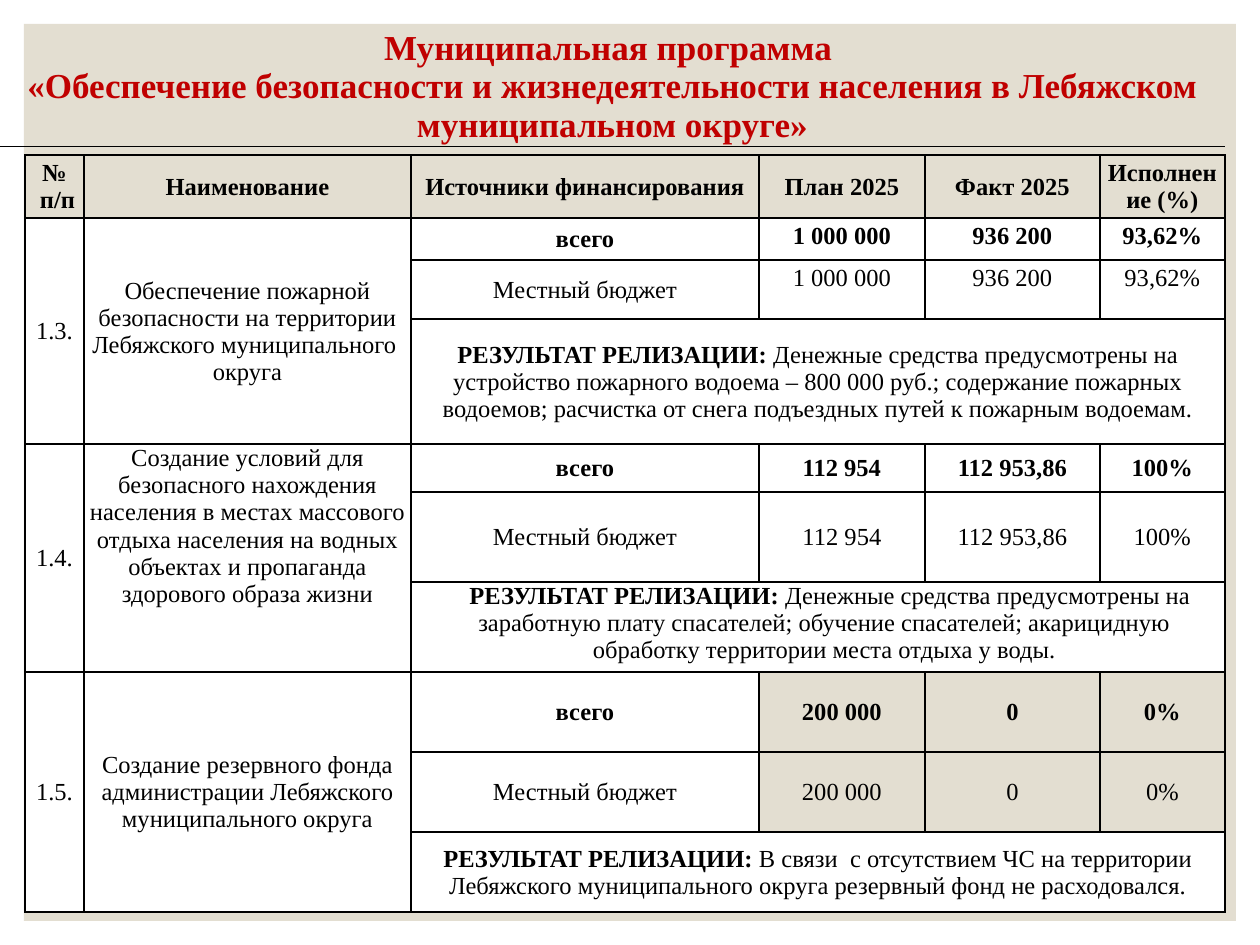
from lxml.etree import SubElement
from pptx import Presentation
from pptx.dml.color import RGBColor
from pptx.enum.shapes import MSO_SHAPE
from pptx.enum.text import MSO_ANCHOR, PP_ALIGN
from pptx.oxml.ns import qn
from pptx.util import Emu, Pt

BEIGE = RGBColor(0xE3, 0xDE, 0xD1)
WHITE = RGBColor(0xFF, 0xFF, 0xFF)
BLACK = RGBColor(0x00, 0x00, 0x00)
RED = RGBColor(0xC0, 0x00, 0x00)

COLUMN_WIDTHS = [59, 327, 348, 166, 175, 125]
ROW_HEIGHTS = [63, 42, 59, 125, 48, 90, 90, 80, 80, 80]
HEADERS = ["№\n п/п", "Наименование", "Источники финансирования",
           "План 2025", "Факт 2025", "Исполнение (%)"]
RESULT = "РЕЗУЛЬТАТ РЕЛИЗАЦИИ:"
TOP, MIDDLE = MSO_ANCHOR.TOP, MSO_ANCHOR.MIDDLE

MEASURES = [
    dict(
        number="1.3.",
        name="Обеспечение пожарной безопасности на территории "
             "Лебяжского муниципального \nокруга",
        values=["1 000 000", "936 200", "93,62%"],
        result=" Денежные средства предусмотрены на устройство пожарного "
               "водоема – 800 000 руб.; содержание пожарных водоемов; "
               "расчистка от снега подъездных путей к пожарным водоемам.",
        value_format=dict(fill=WHITE, anchor=TOP, inset=5),
    ),
    dict(
        number="1.4.",
        name="Создание условий для безопасного нахождения населения в местах "
             "массового отдыха населения на водных объектах и пропаганда "
             "здорового образа жизни",
        values=["112 954", "112 953,86", "100%"],
        result=" Денежные средства предусмотрены на заработную плату "
               "спасателей; обучение спасателей; акарицидную обработку "
               "территории места отдыха у воды.",
        name_format=dict(anchor=TOP),
        value_format=dict(fill=WHITE),
        result_format=dict(anchor=TOP, margin=13, indent=11),
    ),
    dict(
        number="1.5.",
        name="Создание резервного фонда администрации Лебяжского "
             "муниципального округа",
        values=["200 000", "0", "0%"],
        result=" В связи  с отсутствием ЧС на территории Лебяжского "
               "муниципального округа резервный фонд не расходовался.",
    ),
]


def px(length):
    return Emu(round(length * 914400 / 126))


def add_text(paragraph, text, size=14, bold=False, color=BLACK):
    run = paragraph.add_run()
    run.text = text
    font = run.font
    font.name = "Times New Roman"
    font.size = Pt(size)
    font.bold = bold
    font.color.rgb = color


class SlideBuilder:
    def __init__(self, slide):
        self.slide = slide

    def rectangle(self, left, top, width, height, fill):
        shape = self.slide.shapes.add_shape(
            MSO_SHAPE.RECTANGLE, px(left), px(top), px(width), px(height))
        shape.shadow.inherit = False
        shape.fill.solid()
        shape.fill.fore_color.rgb = fill
        shape.line.fill.background()

    def table(self, left, top, widths, heights, borders):
        table = self.slide.shapes.add_table(
            len(heights), len(widths), px(left), px(top),
            px(sum(widths)), px(sum(heights))).table
        table.first_row = table.horz_banding = False
        for column, width in zip(table.columns, widths):
            column.width = px(width)
        for row, height in zip(table.rows, heights):
            row.height = px(height)
        for cell in table.iter_cells():
            self.border(cell, borders)
            self.inset(cell, 1, 0)
        return table

    def border(self, cell, borders):
        properties = cell._tc.get_or_add_tcPr()
        for side in "LRTB":
            width = borders.get(side, 0)
            line = SubElement(properties, qn(f"a:ln{side}"), w=str(Pt(width)))
            if width:
                solid = SubElement(line, qn("a:solidFill"))
                SubElement(solid, qn("a:srgbClr"), val=str(BLACK))
            else:
                SubElement(line, qn("a:noFill"))

    def inset(self, cell, inset, bottom):
        cell.margin_left = cell.margin_right = cell.margin_top = px(inset)
        cell.margin_bottom = px(bottom)

    def cell(self, cell, text, fill=None, anchor=MIDDLE, inset=1, lead="",
             margin=0, indent=0, **text_format):
        if fill is None:
            cell.fill.background()
        else:
            cell.fill.solid()
            cell.fill.fore_color.rgb = fill
        cell.vertical_anchor = anchor
        self.inset(cell, inset, inset if inset > 1 else 0)
        frame = cell.text_frame
        for index, line in enumerate(text.split("\n")):
            paragraph = frame.add_paragraph() if index else frame.paragraphs[0]
            paragraph.alignment = PP_ALIGN.CENTER
            if margin:
                properties = paragraph._p.get_or_add_pPr()
                properties.set("marL", str(px(margin)))
                properties.set("indent", str(px(indent)))
            if lead:
                add_text(paragraph, lead, bold=True)
            add_text(paragraph, line, **text_format)

    def measure(self, table, row, number, name, values, result,
                name_format={}, value_format={}, result_format={}):
        for column in (0, 1):
            table.cell(row, column).merge(table.cell(row + 2, column))
        table.cell(row + 2, 2).merge(table.cell(row + 2, 5))
        self.cell(table.cell(row, 0), number, fill=WHITE)
        self.cell(table.cell(row, 1), name, fill=WHITE, **name_format)
        for offset, source in enumerate(["всего", "Местный бюджет"]):
            bold = offset == 0
            self.cell(table.cell(row + offset, 2), source, fill=WHITE, bold=bold)
            for column, value in enumerate(values, 3):
                self.cell(table.cell(row + offset, column), value,
                          bold=bold, **value_format)
        self.cell(table.cell(row + 2, 2), result, fill=WHITE, lead=RESULT,
                  **result_format)


def main():
    presentation = Presentation()
    presentation.slide_width, presentation.slide_height = px(1260), px(945)
    slide = presentation.slides.add_slide(presentation.slide_layouts[6])
    builder = SlideBuilder(slide)
    builder.rectangle(24, 24, 1212, 897, BEIGE)

    title = builder.table(0, 27, [1225], [119], {"B": 0.5})
    builder.cell(title.cell(0, 0),
                 "Муниципальная программа \n«Обеспечение безопасности и "
                 "жизнедеятельности населения в Лебяжском муниципальном округе»",
                 size=20, bold=True, color=RED)

    table = builder.table(25, 155, COLUMN_WIDTHS, ROW_HEIGHTS,
                          dict.fromkeys("LRTB", 1))
    for column, header in enumerate(HEADERS):
        builder.cell(table.cell(0, column), header, bold=True)
    for index, measure in enumerate(MEASURES):
        builder.measure(table, 1 + 3 * index, **measure)
    presentation.save("out.pptx")


if __name__ == "__main__":
    main()
